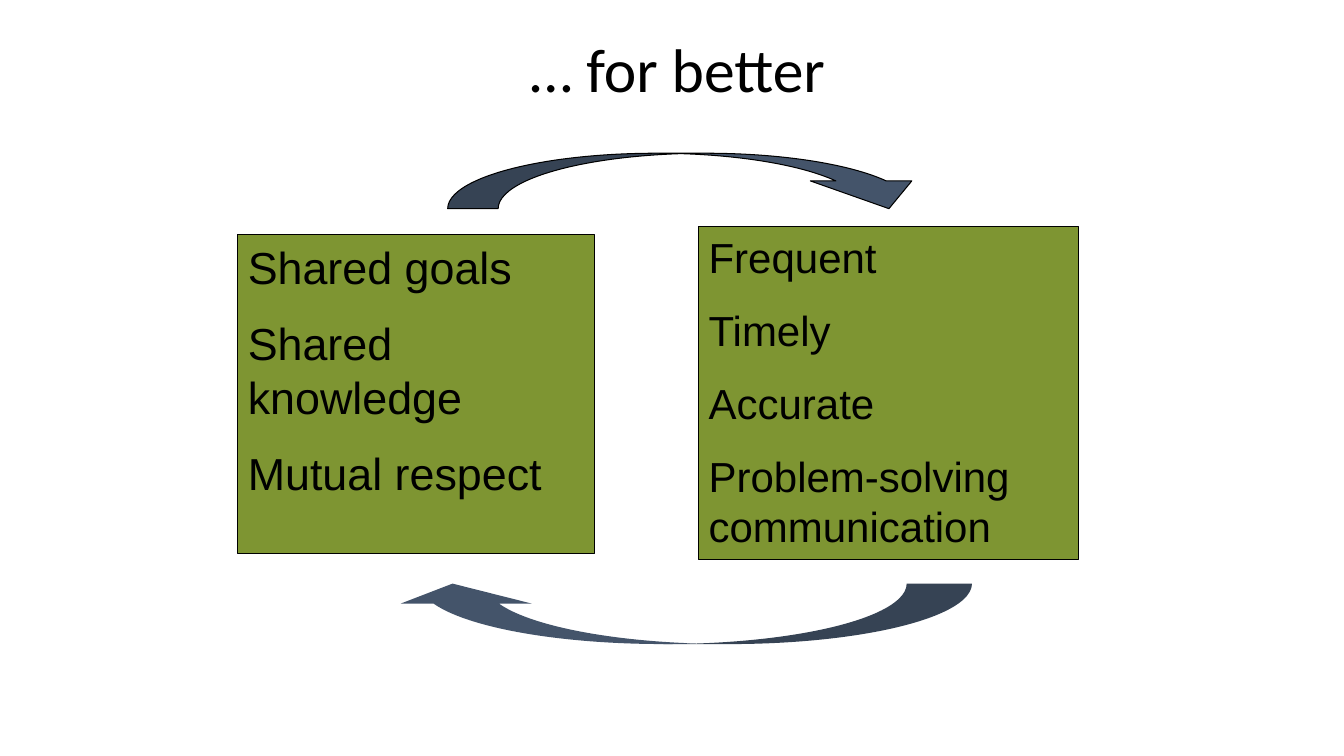
import pptx
import pptx.dml.color
import pptx.enum.shapes
import pptx.enum.text
import pptx.util

Inches = pptx.util.Inches
Pt = pptx.util.Pt
MSO_SHAPE = pptx.enum.shapes.MSO_SHAPE
PP_ALIGN = pptx.enum.text.PP_ALIGN
MSO_ANCHOR = pptx.enum.text.MSO_ANCHOR
MSO_AUTO_SIZE = pptx.enum.text.MSO_AUTO_SIZE
BLACK = pptx.dml.color.RGBColor(0x00, 0x00, 0x00)
OLIVE = pptx.dml.color.RGBColor(0x7E, 0x95, 0x32)
SLATE = pptx.dml.color.RGBColor(0x44, 0x54, 0x6A)


def style_paragraph(p, font, size, align):
    """Set the font and alignment of a paragraph."""
    p.alignment = align
    p.font.name = font
    p.font.size = Pt(size)
    p.font.color.rgb = BLACK


def set_title(s, text, left, top, width, height):
    """Place and format the title placeholder."""
    sp = s.shapes.title
    sp.left, sp.top = Inches(left), Inches(top)
    sp.width, sp.height = Inches(width), Inches(height)
    tf = sp.text_frame
    tf.text = text
    tf.auto_size = MSO_AUTO_SIZE.NONE
    tf.vertical_anchor = MSO_ANCHOR.BOTTOM
    style_paragraph(tf.paragraphs[0], "Calibri", 44, PP_ALIGN.CENTER)


def add_filled(s, kind, left, top, width, height, color, outlined=True):
    """Add a flat preset shape with an optional thin black outline."""
    sp = s.shapes.add_shape(kind, Inches(left), Inches(top), Inches(width), Inches(height))
    sp.shadow.inherit = False
    sp.fill.solid()
    sp.fill.fore_color.rgb = color
    if outlined:
        sp.line.color.rgb = BLACK
        sp.line.width = Pt(0.75)
    else:
        sp.line.fill.background()
    return sp


def add_list_box(s, items, size, left, top, width, height):
    """Add an olive box holding one paragraph per item."""
    sp = add_filled(s, MSO_SHAPE.RECTANGLE, left, top, width, height, OLIVE)
    tf = sp.text_frame
    tf.word_wrap = True
    tf.auto_size = MSO_AUTO_SIZE.SHAPE_TO_FIT_TEXT
    tf.vertical_anchor = MSO_ANCHOR.TOP
    for i, item in enumerate(items):
        p = tf.add_paragraph() if i else tf.paragraphs[0]
        p.text = item
        p.space_before = Pt(16 if i else 0)
        style_paragraph(p, "Arial", size, PP_ALIGN.LEFT)


def add_curved_arrow(s, kind, adjustments, left, top, width, height, rotation=0, outlined=True):
    """Add a slate curved arrow whose frame is given before rotation."""
    sp = add_filled(s, kind, left, top, width, height, SLATE, outlined)
    sp.rotation = rotation
    for i, value in enumerate(adjustments):
        sp.adjustments[i] = value


def build_cycle_slide(prs):
    """Build the slide with two boxes reinforcing each other."""
    s = prs.slides.add_slide(prs.slide_layouts[5])
    set_title(s, "… for better", 0.44, 0.17, 12.56, 0.92)
    add_list_box(s, ["Shared goals", "Shared knowledge", "Mutual respect"],
                 32, 2.36, 2.33, 3.54, 3.16)
    add_list_box(s, ["Frequent", "Timely", "Accurate", "Problem-solving communication"],
                 30, 6.93, 2.25, 3.77, 3.3)
    add_curved_arrow(s, MSO_SHAPE.CURVED_DOWN_ARROW, (0.91, 1.83, 0.5),
                     4.44, 1.52, 4.88, 0.55)
    add_curved_arrow(s, MSO_SHAPE.CURVED_LEFT_ARROW, (1.08, 2.16, 0.33),
                     6.44, 3.19, 0.6, 5.8, rotation=90, outlined=False)


def main():
    """Create the presentation and save it."""
    prs = pptx.Presentation()
    prs.slide_width, prs.slide_height = Inches(13.33), Inches(7.5)
    build_cycle_slide(prs)
    prs.save("out.pptx")


if __name__ == "__main__":
    main()
